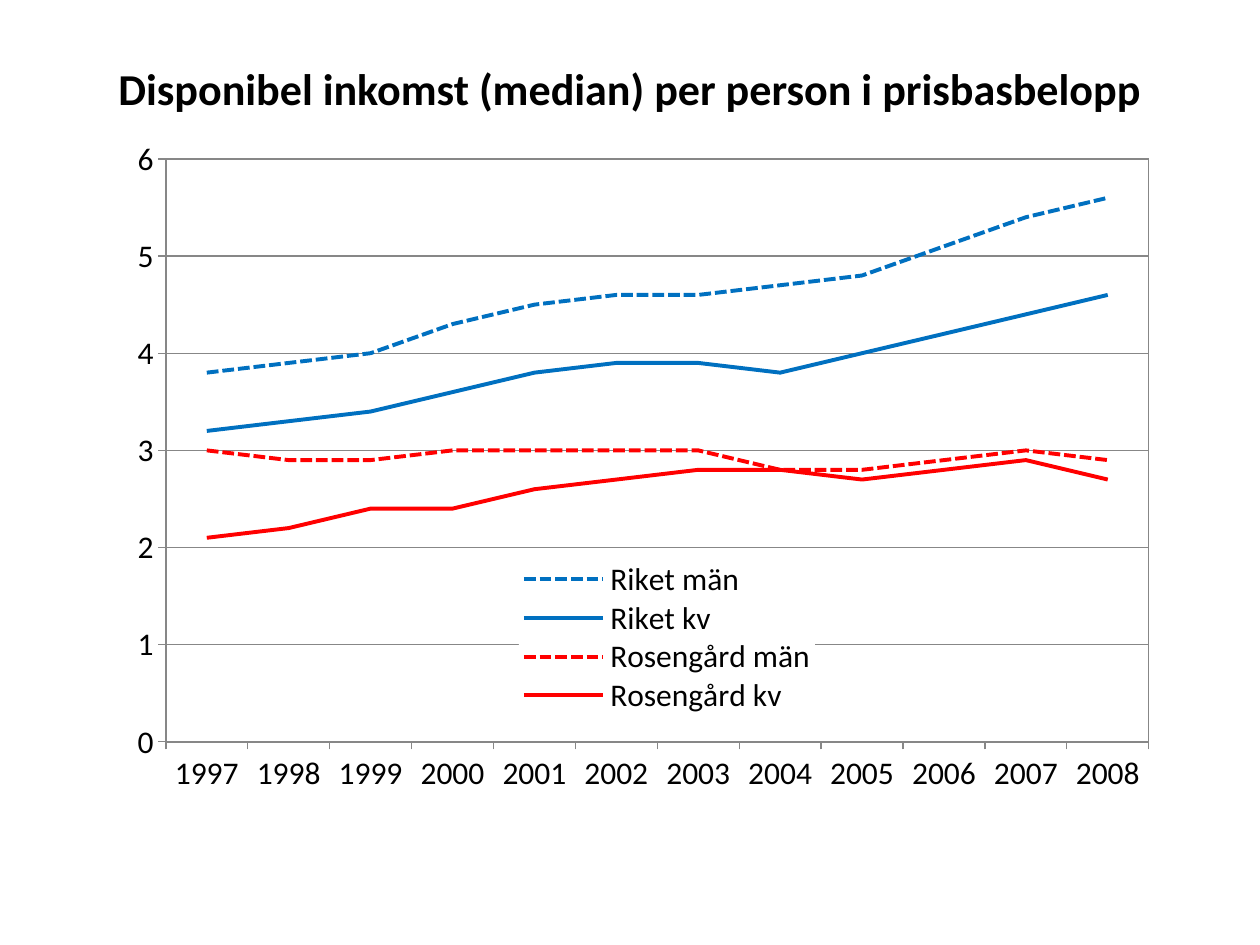
from lxml.etree import fromstring
from pptx import Presentation
from pptx.chart.data import CategoryChartData
from pptx.dml.color import RGBColor
from pptx.enum.chart import XL_CHART_TYPE, XL_LEGEND_POSITION, XL_TICK_MARK
from pptx.enum.dml import MSO_LINE
from pptx.enum.text import MSO_ANCHOR, PP_ALIGN
from pptx.oxml.ns import nsdecls, qn
from pptx.util import Emu, Pt

PX = 914400 // 126
FONT = "Calibri"
BLACK, BLUE, RED, GREY = "000000", "0070C0", "FF0000", "878787"

YEARS = [str(year) for year in range(1997, 2009)]
SERIES = [
    ("Riket män", BLUE, MSO_LINE.SQUARE_DOT,
     (3.8, 3.9, 4, 4.3, 4.5, 4.6, 4.6, 4.7, 4.8, 5.1, 5.4, 5.6)),
    ("Riket kv", BLUE, MSO_LINE.SOLID,
     (3.2, 3.3, 3.4, 3.6, 3.8, 3.9, 3.9, 3.8, 4, 4.2, 4.4, 4.6)),
    ("Rosengård män", RED, MSO_LINE.SQUARE_DOT,
     (3, 2.9, 2.9, 3, 3, 3, 3, 2.8, 2.8, 2.9, 3, 2.9)),
    ("Rosengård kv", RED, MSO_LINE.SOLID,
     (2.1, 2.2, 2.4, 2.4, 2.6, 2.7, 2.8, 2.8, 2.7, 2.8, 2.9, 2.7)),
]


def rgb(value):
    return RGBColor.from_string(value)


def emu(box):
    return [Emu(n * PX) for n in box]


def set_font(font, size, color=BLACK, bold=False):
    font.name, font.size, font.bold = FONT, Pt(size), bold
    font.color.rgb = rgb(color)


def add_text(s, box, text, size, color=BLACK, bold=False, align=PP_ALIGN.CENTER):
    tf = s.shapes.add_textbox(*emu(box)).text_frame
    tf.word_wrap = True
    tf.vertical_anchor = MSO_ANCHOR.MIDDLE
    p = tf.paragraphs[0]
    p.alignment = align
    r = p.add_run()
    r.text = text
    set_font(r.font, size, color, bold)


def chart_xml(tag, body):
    return fromstring(f'<c:{tag} {nsdecls("c", "a")}>{body}</c:{tag}>')


def manual_layout(part, box, outer, inner=False):
    """Give a chart part a fixed box in px, relative to the outer box."""
    left, top, width, height = outer
    x, y, w, h = box
    values = dict(x=x / width, y=y / height, w=w / width, h=h / height)
    target = '<c:layoutTarget val="inner"/>' if inner else ""
    modes = '<c:xMode val="edge"/><c:yMode val="edge"/>'
    sizes = "".join(f'<c:{k} val="{v:.4f}"/>' for k, v in values.items())
    for old in part.findall(qn("c:layout")):
        part.remove(old)
    layout = chart_xml("layout", f"<c:manualLayout>{target}{modes}{sizes}</c:manualLayout>")
    part.insert(0 if inner else 1, layout)


def style_axis(axis):
    axis.major_tick_mark = XL_TICK_MARK.OUTSIDE
    axis.minor_tick_mark = XL_TICK_MARK.NONE
    axis.format.line.color.rgb = rgb(GREY)
    axis.format.line.width = Pt(0.75)
    set_font(axis.tick_labels.font, 18)


def add_income_chart(s, box):
    data = CategoryChartData(number_format="General")
    data.categories = YEARS
    for name, _, _, values in SERIES:
        data.add_series(name, values)
    chart = s.shapes.add_chart(XL_CHART_TYPE.LINE, *emu(box), data).chart
    chart.has_title = False
    set_font(chart.font, 18)
    chart.plots[0].vary_by_categories = False
    for series, (_, color, dash, _) in zip(chart.plots[0].series, SERIES):
        series.smooth = False
        line = series.format.line
        line.color.rgb = rgb(color)
        line.width = Pt(2.25)
        line.dash_style = dash

    style_axis(chart.category_axis)
    axis = chart.value_axis
    style_axis(axis)
    axis.minimum_scale, axis.maximum_scale, axis.major_unit = 0, 6, 1
    axis.has_major_gridlines = True
    axis.major_gridlines.format.line.color.rgb = rgb(GREY)
    axis.major_gridlines.format.line.width = Pt(0.75)

    plot_area = chart.plots[0]._element.getparent()
    manual_layout(plot_area, (88, 22, 983, 583), box, inner=True)
    plot_area.append(chart_xml(
        "spPr", '<a:noFill/><a:ln w="9525"><a:solidFill>'
        f'<a:srgbClr val="{GREY}"/></a:solidFill></a:ln>'))

    chart.has_legend = True
    legend = chart.legend
    legend.position = XL_LEGEND_POSITION.RIGHT
    legend.include_in_layout = False
    set_font(legend.font, 18)
    manual_layout(legend._element, (441, 423, 296, 155), box)
    legend._element.find(qn("c:overlay")).addnext(chart_xml(
        "spPr", '<a:solidFill><a:srgbClr val="FFFFFF"/></a:solidFill>'
        "<a:ln><a:noFill/></a:ln>"))


def main():
    prs = Presentation()
    prs.slide_width, prs.slide_height = emu((1260, 945))
    s = prs.slides.add_slide(prs.slide_layouts[6])
    add_income_chart(s, (78, 137, 1082, 709))
    add_text(s, (63, 38, 1134, 99),
             "Disponibel inkomst (median) per person i prisbasbelopp", 25.2, bold=True)
    prs.save("out.pptx")


if __name__ == "__main__":
    main()
